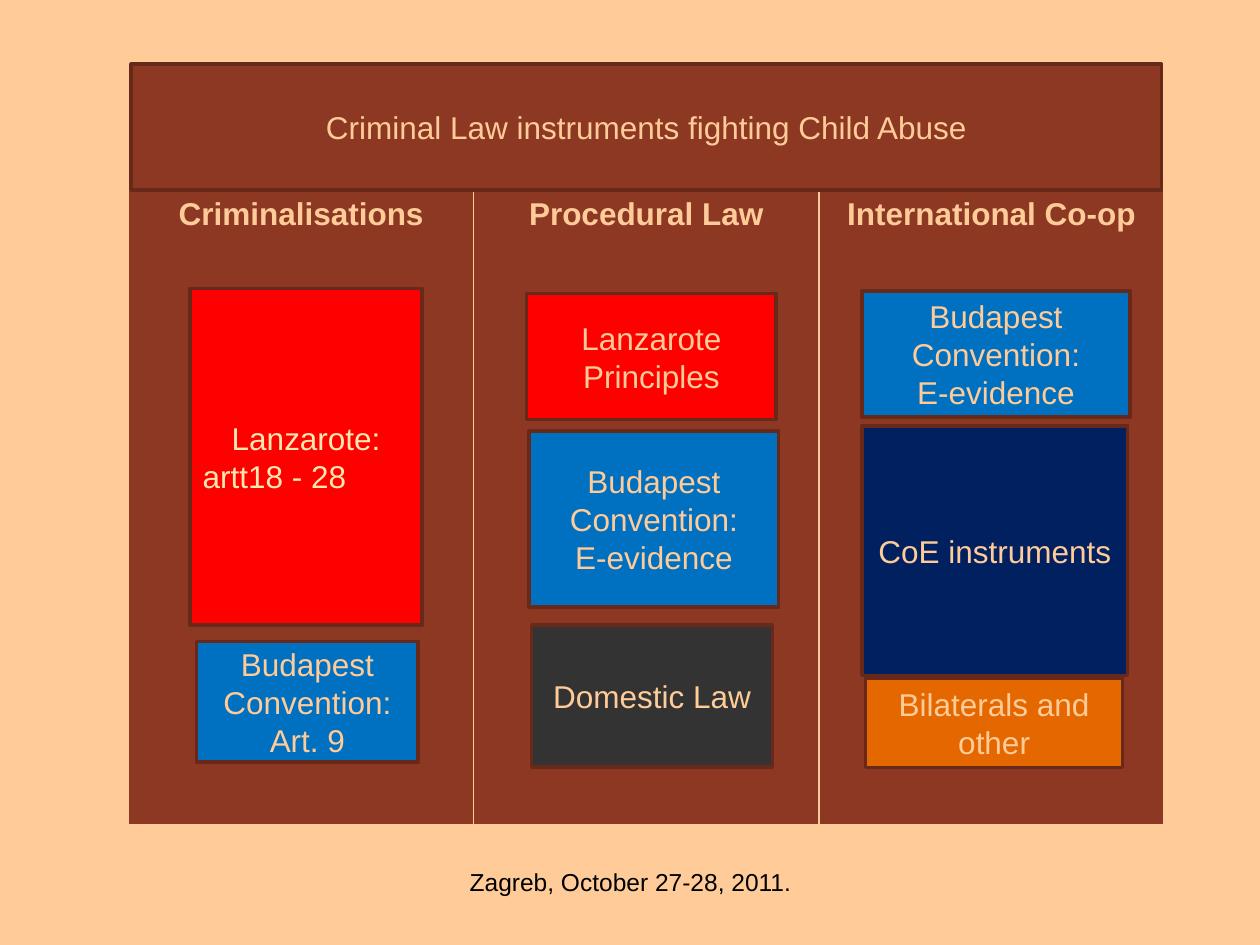
"""Build a slide on criminal law instruments fighting child abuse."""
from lxml import etree
from pptx import Presentation
from pptx import util as u
from pptx.dml.color import RGBColor
from pptx.enum import shapes, text
from pptx.oxml import ns

SAND, BROWN, EDGE = "FFCC99", "8C3823", "68291A"
RED, BLUE, NAVY, GREY, ORANGE = "FF0000", "0070C0", "002060", "333333", "E46700"


def paint(color_format, color):
    color_format.rgb = RGBColor.from_string(color)


def write(frame, content, color=SAND, size=18, bold=False):
    frame.text = content
    frame.word_wrap = True
    for paragraph in frame.paragraphs:
        paragraph.alignment = text.PP_ALIGN.CENTER
        for run in paragraph.runs:
            run.font.name, run.font.size, run.font.bold = "Arial", u.Pt(size), bold
            paint(run.font.color, color)


presentation = Presentation()
presentation.slide_width, presentation.slide_height = u.Inches(10), u.Inches(7.5)
column = presentation.slide_width / 100
row = presentation.slide_height / 75

slide = presentation.slides.add_slide(presentation.slide_layouts[5])
slide.background.fill.solid()
paint(slide.background.fill.fore_color, SAND)

headings = ["Criminalisations", "Procedural Law", "International Co-op"]
table_frame = slide.shapes.add_table(
    1, len(headings), int(10.2 * column), int(15.1 * row), int(82.2 * column), int(50.5 * row))
for cell, heading in zip(table_frame.table.iter_cells(), headings):
    write(cell.text_frame, heading, bold=True)
    properties = cell._tc.get_or_add_tcPr()
    for side, points in (("L", 1), ("R", 1), ("T", 1), ("B", 3)):
        border = etree.SubElement(properties, ns.qn(f"a:ln{side}"), w=str(u.Pt(points)))
        fill = etree.SubElement(border, ns.qn("a:solidFill"))
        etree.SubElement(fill, ns.qn("a:srgbClr"), val=SAND)
    cell.fill.solid()
    paint(cell.fill.fore_color, BROWN)

title = slide.shapes.title
slide.shapes._spTree.append(title._element)
panels = [(title, 10.4, 5.1, 81.8, 10, BROWN, "Criminal Law instruments fighting Child Abuse", SAND)]

boxes = [
    (15.1, 22.9, 18.4, 26.7, RED, "Lanzarote:\nartt18 - 28", "FFE7AF"),
    (15.6, 50.9, 17.6, 9.6, BLUE, "Budapest Convention:\nArt. 9", SAND),
    (41.8, 23.3, 19.8, 10, RED, "Lanzarote Principles", SAND),
    (42, 34.2, 19.8, 14, BLUE, "Budapest Convention:\nE-evidence", SAND),
    (42.2, 49.6, 19.1, 11.3, GREY, "Domestic Law", SAND),
    (68.4, 23.1, 21.3, 10, BLUE, "Budapest Convention:\nE-evidence", SAND),
    (68.4, 33.8, 21.1, 19.8, NAVY, "CoE instruments", SAND),
    (68.7, 53.8, 20.4, 7.1, ORANGE, "Bilaterals and other", SAND),
]
for index, box in enumerate(boxes):
    kind = shapes.MSO_SHAPE.RECTANGLE if index else shapes.MSO_SHAPE.FLOWCHART_PROCESS
    panels.append((slide.shapes.add_shape(kind, 0, 0, 0, 0), *box))

for shape, left, top, width, height, color, content, text_color in panels:
    shape.left, shape.top = int(left * column), int(top * row)
    shape.width, shape.height = int(width * column), int(height * row)
    shape.fill.solid()
    paint(shape.fill.fore_color, color)
    paint(shape.line.color, EDGE)
    shape.line.width = u.Pt(2)
    if shape is not title:
        shape.shadow.inherit = False
    write(shape.text_frame, content, text_color)
    shape.text_frame.vertical_anchor = text.MSO_ANCHOR.MIDDLE
    shape.text_frame.auto_size = text.MSO_AUTO_SIZE.NONE

lanzarote = panels[1][0]
lanzarote.text_frame.paragraphs[1].alignment = text.PP_ALIGN.LEFT

place_and_date = slide.shapes.add_textbox(
    int(34.2 * column), int(68.3 * row), int(31.7 * column), int(5.2 * row))
write(place_and_date.text_frame, "Zagreb, October 27-28, 2011.", "000000", size=14)

presentation.save("out.pptx")
